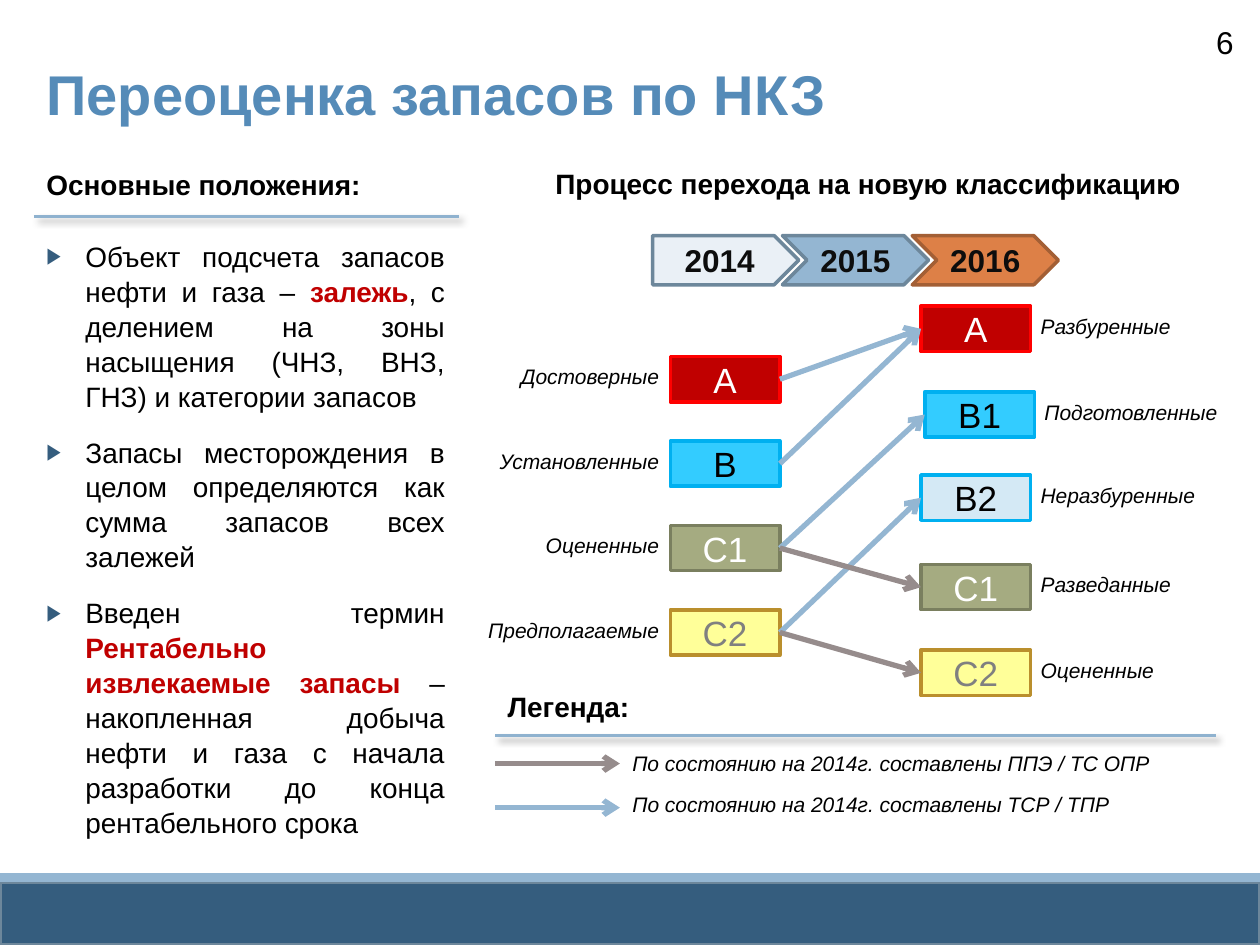
from dataclasses import dataclass
from typing import Optional

from lxml import etree
from pptx import Presentation
from pptx.dml.color import RGBColor
from pptx.enum.shapes import MSO_CONNECTOR, MSO_SHAPE
from pptx.enum.text import MSO_ANCHOR, PP_ALIGN
from pptx.oxml.ns import qn
from pptx.util import Pt

PX = 9144
FONT = "Arial"

STRAIGHT = MSO_CONNECTOR.STRAIGHT
RECTANGLE, PENTAGON, CHEVRON = MSO_SHAPE.RECTANGLE, MSO_SHAPE.PENTAGON, MSO_SHAPE.CHEVRON
LEFT, CENTER, RIGHT, JUSTIFY = PP_ALIGN.LEFT, PP_ALIGN.CENTER, PP_ALIGN.RIGHT, PP_ALIGN.JUSTIFY
TOP, MIDDLE = MSO_ANCHOR.TOP, MSO_ANCHOR.MIDDLE
LEFT_SIDE, RIGHT_SIDE = 1, 3

BLACK = RGBColor(0x00, 0x00, 0x00)
WHITE = RGBColor(0xFF, 0xFF, 0xFF)
INK = RGBColor(0x0D, 0x0D, 0x0D)
GRAY = RGBColor(0x80, 0x80, 0x80)
NAVY = RGBColor(0x35, 0x5D, 0x7E)
SLATE = RGBColor(0x6D, 0x87, 0x9B)
SKY = RGBColor(0x94, 0xB6, 0xD2)
TITLE_BLUE = RGBColor(0x55, 0x8B, 0xB8)
RULE_BLUE = RGBColor(0x8F, 0xB2, 0xCF)
ICE = RGBColor(0xEA, 0xF0, 0xF6)
ORANGE = RGBColor(0xDD, 0x80, 0x47)
RUST = RGBColor(0xA3, 0x5F, 0x35)
TAUPE = RGBColor(0x96, 0x8C, 0x8C)
DARK_RED = RGBColor(0xC0, 0x00, 0x00)
RED = RGBColor(0xFF, 0x00, 0x00)
CYAN = RGBColor(0x33, 0xCC, 0xFF)
AZURE = RGBColor(0x00, 0xB0, 0xF0)
PALE_BLUE = RGBColor(0xD4, 0xE9, 0xF5)
OLIVE = RGBColor(0xA5, 0xAB, 0x81)
DARK_OLIVE = RGBColor(0x7A, 0x7F, 0x5F)
YELLOW = RGBColor(0xFF, 0xFF, 0x99)
GOLD = RGBColor(0xBA, 0x8F, 0x2D)


@dataclass(frozen=True)
class Look:
    fill: RGBColor
    line: Optional[RGBColor]
    text: RGBColor = BLACK


@dataclass(frozen=True)
class Category:
    code: str
    meaning: str
    left: int
    top: int
    look: Look


@dataclass(frozen=True)
class Year:
    name: str
    outline: MSO_SHAPE
    look: Look


@dataclass(frozen=True)
class Transition:
    source: int
    target: int
    color: RGBColor


@dataclass(frozen=True)
class Caption:
    text: str
    box: tuple[int, int, int, int]
    size: int = 12
    align: PP_ALIGN = LEFT
    bold: bool = False
    italic: bool = False


RED_LOOK = Look(DARK_RED, RED, WHITE)
CYAN_LOOK = Look(CYAN, AZURE)
PALE_LOOK = Look(PALE_BLUE, AZURE)
OLIVE_LOOK = Look(OLIVE, DARK_OLIVE, WHITE)
YELLOW_LOOK = Look(YELLOW, GOLD, GRAY)

OLD_LEFT, OLD_TOP, OLD_STEP = 532, 283, 67
OLD_CATEGORIES = [
    Category(code, meaning, OLD_LEFT, OLD_TOP + row * OLD_STEP, look)
    for row, (code, meaning, look) in enumerate([
        ("А", "Достоверные", RED_LOOK),
        ("В", "Установленные", CYAN_LOOK),
        ("С1", "Оцененные", OLIVE_LOOK),
        ("С2", "Предполагаемые", YELLOW_LOOK),
    ])
]
NEW_CATEGORIES = [
    Category("А", "Разбуренные", 731, 243, RED_LOOK),
    Category("В1", "Подготовленные", 734, 311, CYAN_LOOK),
    Category("В2", "Неразбуренные", 731, 377, PALE_LOOK),
    Category("С1", "Разведанные", 731, 448, OLIVE_LOOK),
    Category("С2", "Оцененные", 731, 516, YELLOW_LOOK),
]
TRANSITIONS = [
    Transition(0, 0, SKY), Transition(1, 0, SKY),
    Transition(2, 1, SKY), Transition(3, 2, SKY),
    Transition(2, 3, TAUPE), Transition(3, 4, TAUPE),
]
YEARS = [
    Year("2014", PENTAGON, Look(ICE, SLATE, INK)),
    Year("2015", CHEVRON, Look(SKY, SLATE, INK)),
    Year("2016", CHEVRON, Look(ORANGE, RUST, INK)),
]
CAPTIONS = [
    Caption("6", (881, 13, 108, 40), 18, RIGHT),
    Caption("Основные положения:", (27, 128, 358, 37), 16, bold=True),
    Caption("Процесс перехода на новую классификацию", (393, 127, 592, 37), 16, CENTER, bold=True),
    Caption("Легенда:", (393, 542, 181, 37), 16, bold=True),
    Caption("По состоянию на 2014г. составлены ППЭ / ТС ОПР", (492, 591, 473, 30), italic=True),
    Caption("По состоянию на 2014г. составлены ТСР / ТПР", (492, 623, 441, 30), italic=True),
]
PROVISIONS = [
    [("Объект подсчета запасов нефти и газа – ", False), ("залежь", True),
     (", с делением на зоны насыщения (ЧНЗ, ВНЗ, ГНЗ) и категории запасов", False)],
    [("Запасы месторождения в целом определяются как сумма запасов всех залежей", False)],
    [("Введен термин ", False), ("Рентабельно извлекаемые запасы", True),
     (" – накопленная добыча нефти и газа с начала разработки до конца рентабельного срока", False)],
]


def scaled(*lengths: int) -> list[int]:
    return [length * PX for length in lengths]


def format_paragraph(paragraph, size: int, color: RGBColor, align=LEFT, bold=False, italic=False) -> None:
    paragraph.alignment = align
    font = paragraph.font
    font.name, font.size, font.bold, font.italic = FONT, Pt(size), bold, italic
    font.color.rgb = color


def add_block(slide, outline, box: tuple, look: Look, text="", size=18, bold=False):
    block = slide.shapes.add_shape(outline, *scaled(*box))
    block.shadow.inherit = False
    block.fill.solid()
    block.fill.fore_color.rgb = look.fill
    if look.line is None:
        block.line.fill.background()
    else:
        block.line.color.rgb = look.line
        block.line.width = Pt(2)
    if text:
        frame = block.text_frame
        frame.margin_left = frame.margin_right = 0
        frame.vertical_anchor = MIDDLE
        frame.text = text
        format_paragraph(frame.paragraphs[0], size, look.text, CENTER, bold)
    return block


def add_caption(slide, caption: Caption) -> None:
    frame = slide.shapes.add_textbox(*scaled(*caption.box)).text_frame
    frame.word_wrap = True
    frame.text = caption.text
    format_paragraph(frame.paragraphs[0], caption.size, BLACK, caption.align, caption.bold, caption.italic)


def add_line(slide, ends: tuple, color: RGBColor, width: float):
    line = slide.shapes.add_connector(STRAIGHT, *scaled(*ends))
    line.line.color.rgb = color
    line.line.width = Pt(width)
    return line, etree.SubElement(line._element.spPr, qn("a:effectLst"))


def add_arrow(slide, ends: tuple, color: RGBColor):
    arrow, _ = add_line(slide, ends, color, 3)
    etree.SubElement(arrow.line._get_or_add_ln(), qn("a:tailEnd"), type="arrow")
    return arrow


def add_rule(slide, ends: tuple) -> None:
    _, effects = add_line(slide, ends, RULE_BLUE, 1.5)
    shadow = etree.SubElement(effects, qn("a:outerShdw"), blurRad=str(Pt(4)), dist=str(Pt(3)), dir="2700000")
    tint = etree.SubElement(shadow, qn("a:srgbClr"), val=str(BLACK))
    etree.SubElement(tint, qn("a:alpha"), val="40000")


def add_provisions(slide) -> None:
    frame = slide.shapes.add_textbox(*scaled(27, 184, 336, 475)).text_frame
    frame.word_wrap = True
    for index, provision in enumerate(PROVISIONS):
        paragraph = frame.add_paragraph() if index else frame.paragraphs[0]
        props = paragraph._p.get_or_add_pPr()
        props.set("marL", str(31 * PX))
        props.set("indent", str(-31 * PX))
        bullet_color = etree.SubElement(props, qn("a:buClr"))
        etree.SubElement(bullet_color, qn("a:srgbClr"), val=str(NAVY))
        etree.SubElement(props, qn("a:buSzPct"), val="80000")
        etree.SubElement(props, qn("a:buFont"), typeface=FONT)
        etree.SubElement(props, qn("a:buChar"), char="▶")
        paragraph.space_before = paragraph.space_after = Pt(6)
        paragraph.line_spacing = 1.04
        format_paragraph(paragraph, 16, BLACK, JUSTIFY)
        for text, is_key in provision:
            run = paragraph.add_run()
            run.text = text
            if is_key:
                run.font.bold = True
                run.font.color.rgb = DARK_RED


def add_title(slide) -> None:
    title = slide.shapes.title
    title.left, title.top, title.width, title.height = scaled(27, 38, 923, 54)
    frame = title.text_frame
    frame.vertical_anchor = TOP
    frame.margin_top, frame.margin_bottom = scaled(9, 0)
    frame.text = "Переоценка запасов по НКЗ"
    format_paragraph(frame.paragraphs[0], 32, TITLE_BLUE, bold=True)


def add_category(slide, category: Category, label_left: int, align):
    box = add_block(slide, RECTANGLE, (category.left, category.top, 87, 36), category.look, category.code, 20)
    add_caption(slide, Caption(category.meaning, (label_left, category.top + 1, 181, 30), align=align, italic=True))
    return box


def main() -> None:
    deck = Presentation()
    deck.slide_width, deck.slide_height = scaled(1000, 750)
    slide = deck.slides.add_slide(deck.slide_layouts[5])
    add_block(slide, RECTANGLE, (0, 700, 1000, 50), Look(NAVY, SLATE))
    add_block(slide, RECTANGLE, (0, 693, 1000, 7), Look(SKY, None))
    add_title(slide)
    add_provisions(slide)
    for caption in CAPTIONS:
        add_caption(slide, caption)
    for index, year in enumerate(YEARS):
        add_block(slide, year.outline, (518 + index * 103, 187, 116, 39), year.look, year.name, 18, True)
    old_boxes = [add_category(slide, old, old.left - 180, RIGHT) for old in OLD_CATEGORIES]
    new_boxes = [add_category(slide, new, new.left + 85, LEFT) for new in NEW_CATEGORIES]
    for transition in TRANSITIONS:
        arrow = add_arrow(slide, (0, 0, 0, 0), transition.color)
        arrow.begin_connect(old_boxes[transition.source], RIGHT_SIDE)
        arrow.end_connect(new_boxes[transition.target], LEFT_SIDE)
    for y, color in [(606, TAUPE), (641, SKY)]:
        add_arrow(slide, (393, y, 492, y), color)
    for ends in [(27, 172, 364, 172), (393, 584, 965, 584)]:
        add_rule(slide, ends)
    deck.save("out.pptx")


if __name__ == "__main__":
    main()
